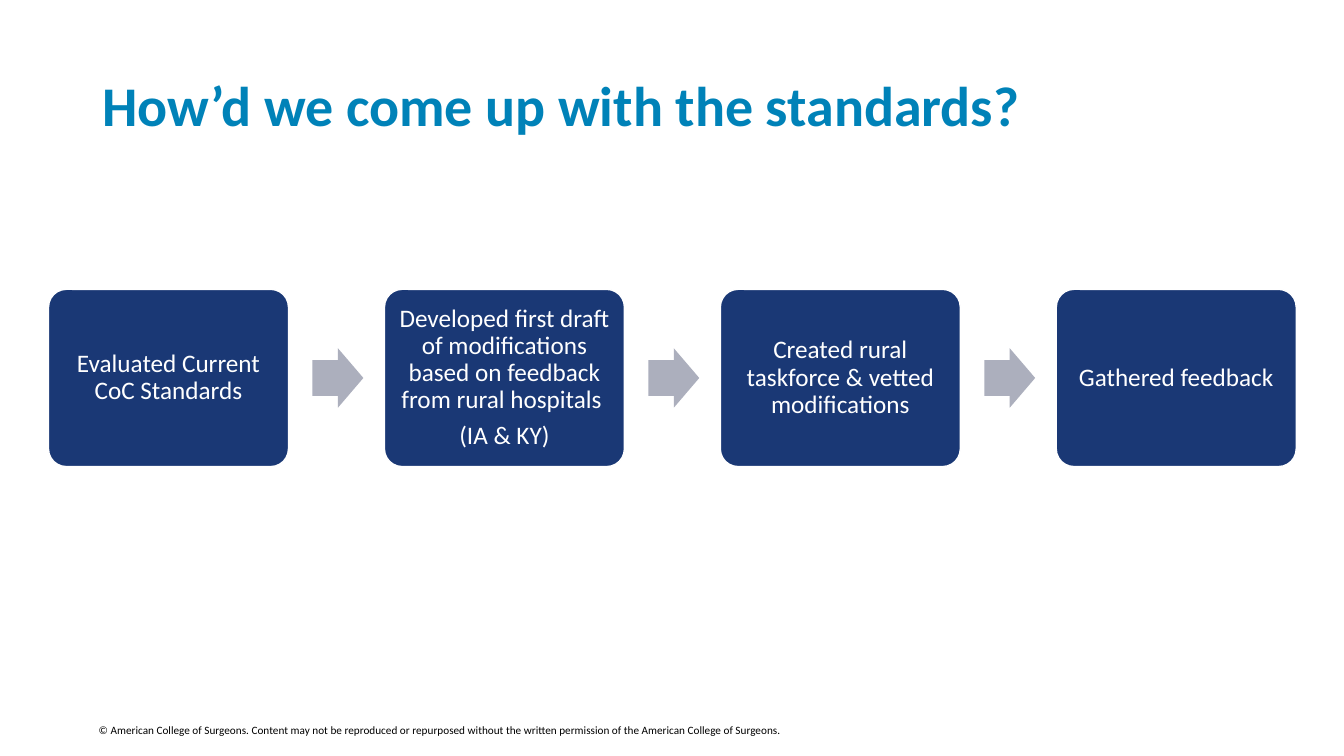
from dataclasses import dataclass

from pptx import Presentation
from pptx.dml.color import RGBColor
from pptx.enum.shapes import MSO_SHAPE as Shape
from pptx.enum.text import MSO_ANCHOR as Anchor, PP_ALIGN as Align
from pptx.util import Pt


@dataclass(frozen=True)
class Theme:
    font: str = "Calibri"
    title_color: RGBColor = RGBColor(0x00, 0x82, 0xB8)
    step_fill: RGBColor = RGBColor(0x1A, 0x38, 0x75)
    arrow_fill: RGBColor = RGBColor(0xAC, 0xAF, 0xBD)
    white: RGBColor = RGBColor(0xFF, 0xFF, 0xFF)
    black: RGBColor = RGBColor(0x00, 0x00, 0x00)
    title_size: float = 40
    step_size: float = 18
    footer_size: float = 8


@dataclass(frozen=True)
class Box:
    left: float
    top: float
    width: float
    height: float

    def lengths(self):
        return Pt(self.left), Pt(self.top), Pt(self.width), Pt(self.height)


THEME = Theme()
STEPS = [
    ["Evaluated Current CoC Standards"],
    ["Developed first draft of modifications based on feedback from rural hospitals ",
     "(IA & KY)"],
    ["Created rural taskforce & vetted modifications"],
    ["Gathered feedback"],
]


def add_run(paragraph, text, size, color, bold=False):
    run = paragraph.add_run()
    run.text = text
    run.font.name = THEME.font
    run.font.size = Pt(size)
    run.font.bold = bold
    run.font.color.rgb = color


def add_filled_shape(slide, kind, box, fill, adjustments):
    shape = slide.shapes.add_shape(kind, *box.lengths())
    shape.shadow.inherit = False
    shape.fill.solid()
    shape.fill.fore_color.rgb = fill
    shape.line.fill.background()
    for index, value in enumerate(adjustments):
        shape.adjustments[index] = value
    return shape


def add_title(slide, box, text):
    frame = slide.shapes.add_textbox(*box.lengths()).text_frame
    frame.word_wrap = True
    frame.vertical_anchor = Anchor.MIDDLE
    paragraph = frame.paragraphs[0]
    paragraph.line_spacing = 0.9
    add_run(paragraph, text, THEME.title_size, THEME.title_color, bold=True)


def add_footer(slide, box, text):
    frame = slide.shapes.add_textbox(*box.lengths()).text_frame
    frame.word_wrap = True
    add_run(frame.paragraphs[0], text, THEME.footer_size, THEME.black)


def add_step(slide, box, texts):
    shape = add_filled_shape(slide, Shape.ROUNDED_RECTANGLE, box, THEME.step_fill, [0.1])
    shape.line.color.rgb = THEME.white
    shape.line.width = Pt(1)
    frame = shape.text_frame
    frame.word_wrap = True
    frame.vertical_anchor = Anchor.MIDDLE
    frame.margin_left = frame.margin_right = Pt(5)
    frame.margin_top = frame.margin_bottom = Pt(5)
    for index, text in enumerate(texts):
        paragraph = frame.add_paragraph() if index else frame.paragraphs[0]
        paragraph.alignment = Align.CENTER
        paragraph.line_spacing = 0.9
        paragraph.space_after = Pt(0.35 * THEME.step_size)
        add_run(paragraph, text, THEME.step_size, THEME.white)


def add_process(slide, box, steps):
    # Each gap is 40% of a step wide and starts with a 10% margin before its arrow
    step_width = box.width / (len(steps) + 0.4 * (len(steps) - 1))
    pitch = 1.4 * step_width
    arrow_width, arrow_height = 0.212 * step_width, 0.248 * step_width
    arrow_top = box.top + (box.height - arrow_height) / 2
    for index, texts in enumerate(steps):
        left = box.left + index * pitch
        if index:
            arrow_left = left - 0.3 * step_width
            arrow_box = Box(arrow_left, arrow_top, arrow_width, arrow_height)
            add_filled_shape(slide, Shape.RIGHT_ARROW, arrow_box,
                             THEME.arrow_fill, [0.6, 0.5])
        add_step(slide, Box(left, box.top, step_width, box.height), texts)


def main():
    presentation = Presentation()
    presentation.slide_width, presentation.slide_height = Pt(960), Pt(540)
    slide = presentation.slides.add_slide(presentation.slide_layouts[6])

    # Footer, title and process row
    add_footer(slide, Box(63.4, 513.4, 828, 17),
               "© American College of Surgeons. Content may not be reproduced or repurposed "
               "without the written permission of the American College of Surgeons.")
    add_title(slide, Box(66, 42.5, 828, 70), "How’d we come up with the standards?")
    add_process(slide, Box(34.7, 206.7, 891.2, 126.6), STEPS)

    presentation.save("out.pptx")


if __name__ == "__main__":
    main()
